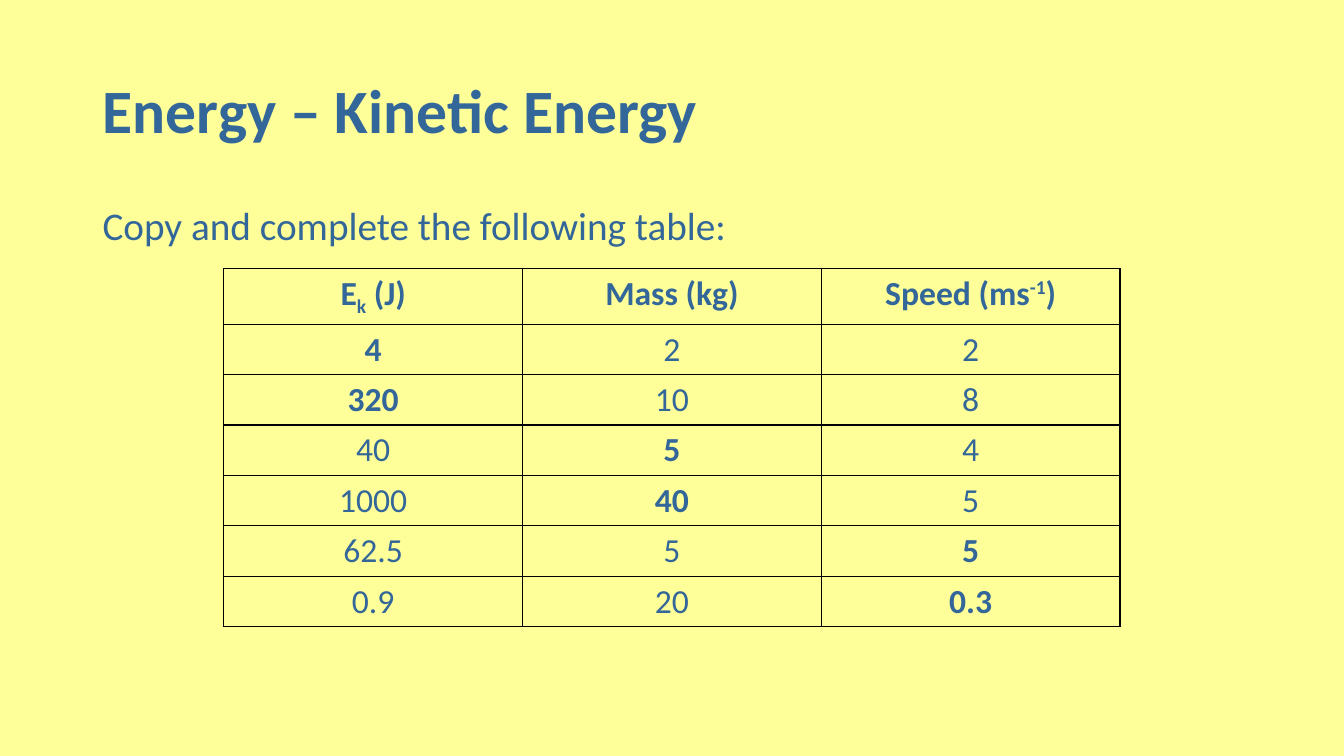
from lxml.etree import SubElement
from pptx import Presentation
from pptx.dml.color import RGBColor
from pptx.enum.text import MSO_ANCHOR as Anchor, PP_ALIGN as Align
from pptx.oxml.ns import qn
from pptx.util import Inches, Pt

BACKGROUND = RGBColor(0xFF, 0xFF, 0x99)
TEXT_BLUE = RGBColor(0x33, 0x66, 0x99)
BORDER_BLACK = RGBColor(0, 0, 0)

TITLE_FORMAT = {"size": Pt(44), "bold": True}
PROMPT_FORMAT = {"size": Pt(28), "bold": False}
ANSWER_FORMAT = {"size": Pt(24), "bold": True}
GIVEN_FORMAT = {"size": Pt(24), "bold": False}

SUBSCRIPT, SUPERSCRIPT = -25, 30
HEADERS = [
    [("E", 0), ("k", SUBSCRIPT), (" (J)", 0)],
    [("Mass (kg)", 0)],
    [("Speed (ms", 0), ("-1", SUPERSCRIPT), (")", 0)],
]
ENERGY, MASS, SPEED = range(3)
ROWS = [
    (["4", "2", "2"], ENERGY),
    (["320", "10", "8"], ENERGY),
    (["40", "5", "4"], MASS),
    (["1000", "40", "5"], MASS),
    (["62.5", "5", "5"], SPEED),
    (["0.9", "20", "0.3"], SPEED),
]


def add_run(paragraph, text, formats, baseline=0):
    """Add a formatted run, raised or lowered by a baseline percentage."""
    run = paragraph.add_run()
    run.text = text
    for name, value in formats.items():
        setattr(run.font, name, value)
    run.font.name = "Calibri"
    run.font.color.rgb = TEXT_BLUE
    if baseline:
        run._r.get_or_add_rPr().set("baseline", str(baseline * 1000))


def write_line(shape, text, formats, anchor):
    """Write one left-aligned line into a title or text box."""
    frame = shape.text_frame
    frame.word_wrap = True
    frame.vertical_anchor = anchor
    paragraph = frame.paragraphs[0]
    paragraph.alignment = Align.LEFT
    paragraph.line_spacing = 0.9
    add_run(paragraph, text, formats)
    return paragraph


def add_title(slide, text):
    """Place and fill the title placeholder."""
    title = slide.shapes.title
    title.left, title.top = Inches(0.92), Inches(0.4)
    title.width, title.height = Inches(11.5), Inches(1.45)
    write_line(title, text, TITLE_FORMAT, Anchor.MIDDLE)


def add_prompt(slide, text):
    """Add the instruction above the table."""
    box = slide.shapes.add_textbox(
        Inches(0.92), Inches(2), Inches(11.5), Inches(0.6))
    paragraph = write_line(box, text, PROMPT_FORMAT, Anchor.TOP)
    paragraph.space_before = Pt(10)


def add_borders(cell):
    """Draw a thin solid line on every side of a cell."""
    properties = cell._tc.get_or_add_tcPr()
    for position, side in enumerate(("lnL", "lnR", "lnT", "lnB")):
        line = SubElement(properties, qn(f"a:{side}"), w=str(Pt(1)))
        fill = SubElement(line, qn("a:solidFill"))
        SubElement(fill, qn("a:srgbClr"), val=str(BORDER_BLACK))
        properties.insert(position, line)


def fill_cell(cell, runs, formats):
    """Fill a clear, bordered cell with centred runs."""
    cell.fill.background()
    add_borders(cell)
    paragraph = cell.text_frame.paragraphs[0]
    paragraph.alignment = Align.CENTER
    for text, baseline in runs:
        add_run(paragraph, text, formats, baseline)


def add_energy_table(slide):
    """Add the table with the worked-out answers in bold."""
    table = slide.shapes.add_table(
        len(ROWS) + 1, len(HEADERS),
        Inches(2.22), Inches(2.66), Inches(8.89), Inches(3.5)).table
    table.first_row = table.horz_banding = False
    for column, runs in enumerate(HEADERS):
        fill_cell(table.cell(0, column), runs, ANSWER_FORMAT)
    for row, (values, answer) in enumerate(ROWS, start=1):
        for column, value in enumerate(values):
            formats = ANSWER_FORMAT if column == answer else GIVEN_FORMAT
            fill_cell(table.cell(row, column), [(value, 0)], formats)


def main():
    """Build and save the kinetic energy slide."""
    presentation = Presentation()
    presentation.slide_width = Inches(13.33)
    presentation.slide_height = Inches(7.5)
    slide = presentation.slides.add_slide(presentation.slide_layouts[5])
    slide.background.fill.solid()
    slide.background.fill.fore_color.rgb = BACKGROUND
    add_title(slide, "Energy – Kinetic Energy")
    add_prompt(slide, "Copy and complete the following table:")
    add_energy_table(slide)
    presentation.save("out.pptx")


if __name__ == "__main__":
    main()
